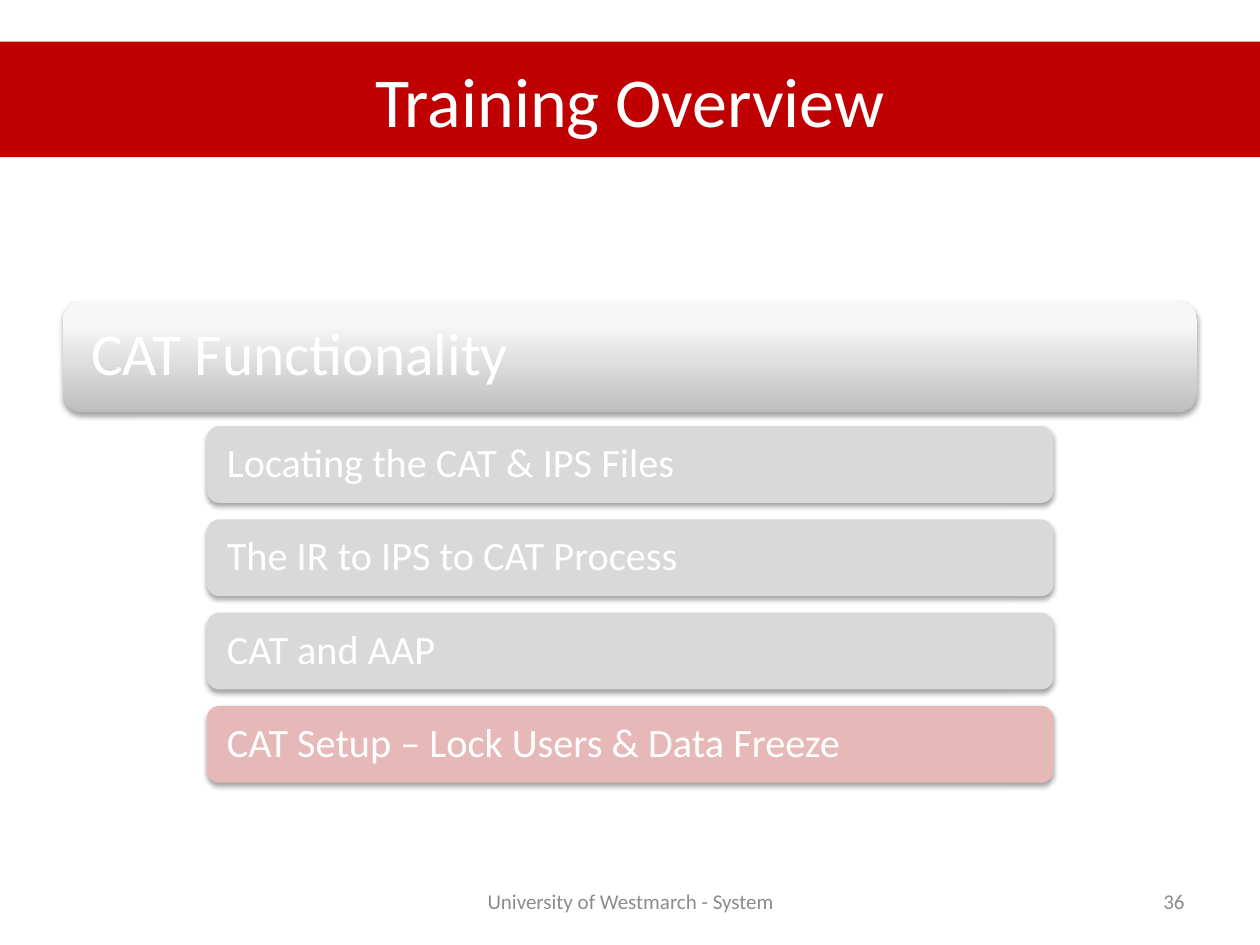
from pptx import Presentation
from pptx.dml.color import RGBColor
from pptx.enum.shapes import MSO_SHAPE
from pptx.enum.text import MSO_ANCHOR, PP_ALIGN
from pptx.oxml import parse_xml
from pptx.util import Cm, Pt

HUES = {"red": "C00000", "pink": "E6B9B8", "pale": "D9D9D9",
        "white": "FFFFFF", "gray": "8C8C8C", "black": "000000"}
FADE = [(0, "BEBEBE"), (80, "F7F7F7"), (100, "F8F8F8")]
TITLE = "Training Overview"
HEAD = "CAT Functionality"
TOPICS = [
    ("Locating the CAT & IPS Files", "pale"),
    ("The IR to IPS to CAT Process", "pale"),
    ("CAT and AAP", "pale"),
    ("CAT Setup – Lock Users & Data Freeze", "pink"),
]
NOTES = [
    ("University of Westmarch - System", 8.69, 8.05, PP_ALIGN.CENTER),
    ("36", 18.21, 5.92, PP_ALIGN.RIGHT),
]
TOP, STEP = 8.59, 1.88
NS = 'xmlns:a="http://schemas.openxmlformats.org/drawingml/2006/main"'


def write(shape, text, size=23, hue="white", align=PP_ALIGN.LEFT,
          inset=None, lead=None, before=0):
    frame = shape.text_frame
    frame.word_wrap = True
    frame.vertical_anchor = MSO_ANCHOR.MIDDLE
    if inset is not None:
        frame.margin_left = frame.margin_right = Cm(inset)
        frame.margin_top = frame.margin_bottom = Cm(inset)
    para = frame.paragraphs[0]
    para.alignment = align
    para.space_before = Pt(before)
    if lead:
        para.line_spacing = lead
    run = para.add_run()
    run.text = text
    run.font.name = "Calibri"
    run.font.size = Pt(size)
    run.font.color.rgb = RGBColor.from_string(HUES[hue])


def paint(shape, hue):
    shape.fill.solid()
    shape.fill.fore_color.rgb = RGBColor.from_string(HUES[hue])


def blend(shape):
    stops = "".join(
        f'<a:gs pos="{pos * 1000}"><a:srgbClr val="{hue}"/></a:gs>'
        for pos, hue in FADE)
    fill = parse_xml(f'<a:gradFill {NS} rotWithShape="1"><a:gsLst>{stops}</a:gsLst>'
                     '<a:lin ang="16200000" scaled="0"/></a:gradFill>')
    shape.element.spPr.prstGeom.addnext(fill)


def shade(shape):
    shape.shadow.inherit = False
    glow = parse_xml(
        f'<a:outerShdw {NS} blurRad="{Pt(3.1)}" dist="{Pt(1.8)}" dir="5400000" '
        f'rotWithShape="0"><a:srgbClr val="{HUES["black"]}">'
        '<a:alpha val="35000"/></a:srgbClr></a:outerShdw>')
    shape.element.spPr.find("{*}effectLst").append(glow)


def panel(slide, left, top, width, height):
    shape = slide.shapes.add_shape(MSO_SHAPE.ROUNDED_RECTANGLE,
                                   Cm(left), Cm(top), Cm(width), Cm(height))
    shape.line.fill.background()
    shade(shape)
    return shape


def main():
    deck = Presentation()
    deck.slide_width, deck.slide_height = Cm(25.4), Cm(19.05)
    slide = deck.slides.add_slide(deck.slide_layouts[5])

    title = slide.shapes.title
    title.left, title.top = Cm(0), Cm(0.84)
    title.width, title.height = Cm(25.4), Cm(2.33)
    paint(title, "red")
    write(title, TITLE, size=40, align=PP_ALIGN.CENTER, before=4)

    head = panel(slide, 1.27, 6.07, 22.86, 2.24)
    blend(head)
    write(head, HEAD, size=34, inset=0.46, lead=0.9)

    for row, (text, hue) in enumerate(TOPICS):
        topic = panel(slide, 4.17, TOP + row * STEP, 17.07, 1.55)
        paint(topic, hue)
        write(topic, text, inset=0.33, lead=0.9)

    for text, left, width, align in NOTES:
        note = slide.shapes.add_textbox(Cm(left), Cm(17.65), Cm(width), Cm(1.02))
        write(note, text, size=12, hue="gray", align=align)

    deck.save("out.pptx")


if __name__ == "__main__":
    main()
